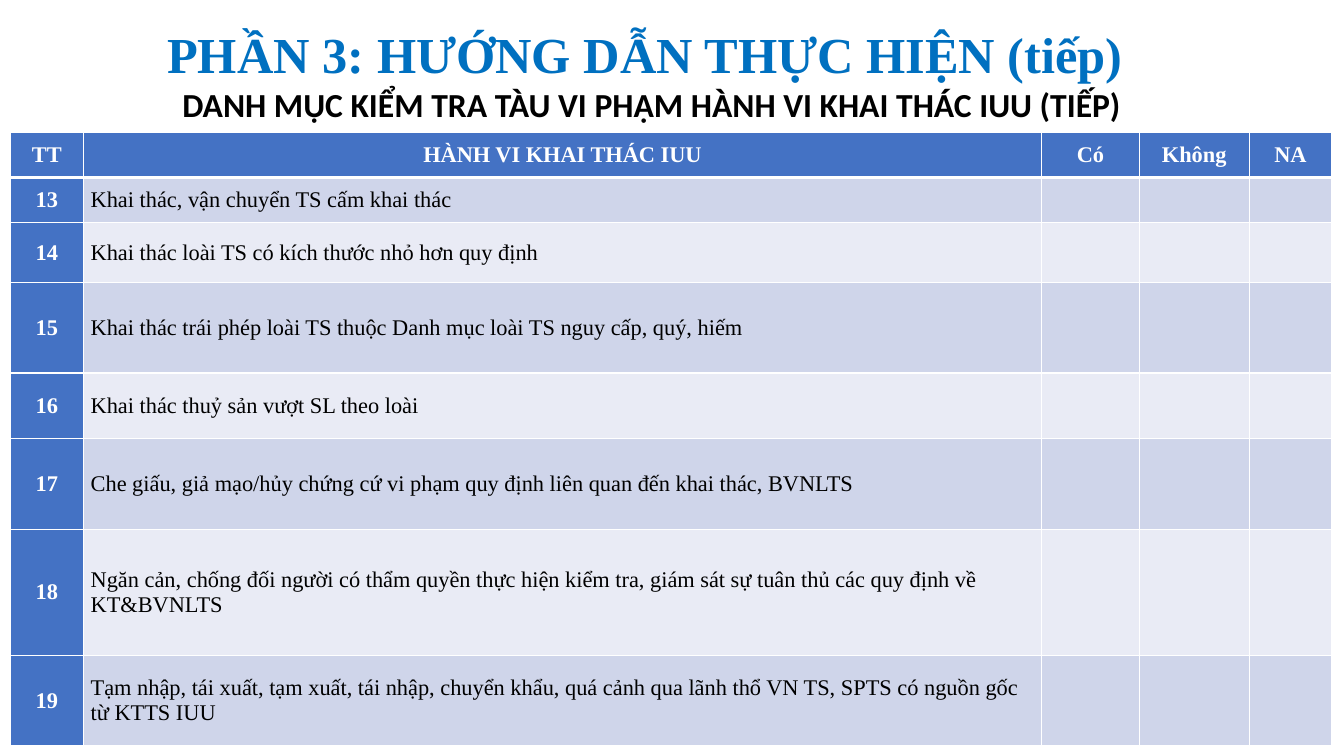
from lxml import etree
from pptx import Presentation
from pptx import util as u
from pptx.dml import color
from pptx.enum import text
from pptx.oxml import ns

SERIF = "Times New Roman"
SANS = "Calibri"
WHITE, BLACK, TITLE_BLUE = "FFFFFF", "000000", "0070C0"
HEAD_FILL, BANDS = "4472C4", ("CFD5EA", "E9EBF5")

HEADERS = ["TT", "HÀNH VI KHAI THÁC IUU", "Có", "Không", "NA"]
COL_WIDTHS = [0.73, 9.5, 0.97, 1.09, 0.82]
HEADER_HEIGHT = 0.45
FIRST_NUMBER = 13
# Violation and row height
VIOLATIONS = [
    ("Khai thác, vận chuyển TS cấm khai thác", 0.45),
    ("Khai thác loài TS có kích thước nhỏ hơn quy định", 0.59),
    ("Khai thác trái phép loài TS thuộc Danh mục loài TS nguy cấp, quý, hiếm", 0.9),
    ("Khai thác thuỷ sản vượt SL theo loài", 0.65),
    ("Che giấu, giả mạo/hủy chứng cứ vi phạm quy định liên quan đến khai thác, BVNLTS", 0.9),
    ("Ngăn cản, chống đối người có thẩm quyền thực hiện kiểm tra, giám sát "
     "sự tuân thủ các quy định về KT&BVNLTS", 1.25),
    ("Tạm nhập, tái xuất, tạm xuất, tái nhập, chuyển khẩu, quá cảnh qua lãnh thổ VN TS, "
     "SPTS có nguồn gốc từ KTTS IUU", 0.9),
]


def rgb(value):
    return color.RGBColor.from_string(value)


class SlideBuilder:
    def __init__(self, slide):
        self.s = slide

    def run(self, p, words, size, font, ink, bold):
        r = p.add_run()
        r.text = words
        r.font.size = u.Pt(size)
        r.font.name = font
        r.font.bold = bold
        r.font.color.rgb = rgb(ink)

    def heading(self, words, box, size, font, ink):
        sp = self.s.shapes.add_textbox(*map(u.Inches, box))
        tf = sp.text_frame
        tf.word_wrap = True
        tf.vertical_anchor = text.MSO_ANCHOR.MIDDLE
        p = tf.paragraphs[0]
        p.line_spacing = 0.9
        self.run(p, words, size, font, ink, True)

    def table(self, left, top, widths, heights):
        frame = self.s.shapes.add_table(
            len(heights), len(widths), u.Inches(left), u.Inches(top),
            u.Inches(sum(widths)), u.Inches(sum(heights)))
        tbl = frame.table
        for col, width in zip(tbl.columns, widths):
            col.width = u.Inches(width)
        for row, height in zip(tbl.rows, heights):
            row.height = u.Inches(height)
        return tbl

    def borders(self, cell, **widths):
        tc_pr = cell._tc.get_or_add_tcPr()
        for side in "LRTB":
            ln = etree.SubElement(tc_pr, ns.qn(f"a:ln{side}"), w=str(u.Pt(widths.get(side, 1))))
            fill = etree.SubElement(ln, ns.qn("a:solidFill"))
            etree.SubElement(fill, ns.qn("a:srgbClr"), val=WHITE)

    def paint(self, cell, fill):
        cell.fill.solid()
        cell.fill.fore_color.rgb = rgb(fill)

    def cell_text(self, cell, words, ink, bold, centred):
        cell.vertical_anchor = text.MSO_ANCHOR.MIDDLE
        cell.margin_left = cell.margin_right = u.Inches(0.05 if centred else 0.07)
        cell.margin_top = cell.margin_bottom = 0
        p = cell.text_frame.paragraphs[0]
        p.alignment = text.PP_ALIGN.CENTER if centred else text.PP_ALIGN.LEFT
        p.space_before = u.Pt(6)
        self.run(p, words, 16, SERIF, ink, bold)


def main():
    prs = Presentation()
    prs.slide_width, prs.slide_height = u.Inches(13.33), u.Inches(7.5)
    b = SlideBuilder(prs.slides.add_slide(prs.slide_layouts[6]))

    # Headings
    b.heading("PHẦN 3: HƯỚNG DẪN THỰC HIỆN (tiếp)", (1.56, 0.34, 11, 0.45),
              36, SERIF, TITLE_BLUE)
    b.heading("DANH MỤC KIỂM TRA TÀU VI PHẠM HÀNH VI KHAI THÁC IUU (TIẾP)",
              (1.71, 0.79, 9.52, 0.53), 24, SANS, BLACK)

    # Checklist header
    tbl = b.table(0.1, 1.31, COL_WIDTHS, [HEADER_HEIGHT] + [h for _, h in VIOLATIONS])
    for cell, label in zip(tbl.rows[0].cells, HEADERS):
        b.borders(cell, B=3)
        b.paint(cell, HEAD_FILL)
        b.cell_text(cell, label, WHITE, True, True)

    # Checklist rows
    for i, (violation, _) in enumerate(VIOLATIONS):
        cells = list(tbl.rows[i + 1].cells)
        for j, cell in enumerate(cells):
            b.borders(cell, T=3 if i == 0 else 1)
            b.paint(cell, BANDS[i % 2] if j else HEAD_FILL)
        b.cell_text(cells[0], str(FIRST_NUMBER + i), WHITE, True, True)
        b.cell_text(cells[1], violation, BLACK, False, False)

    prs.save("out.pptx")


if __name__ == "__main__":
    main()
